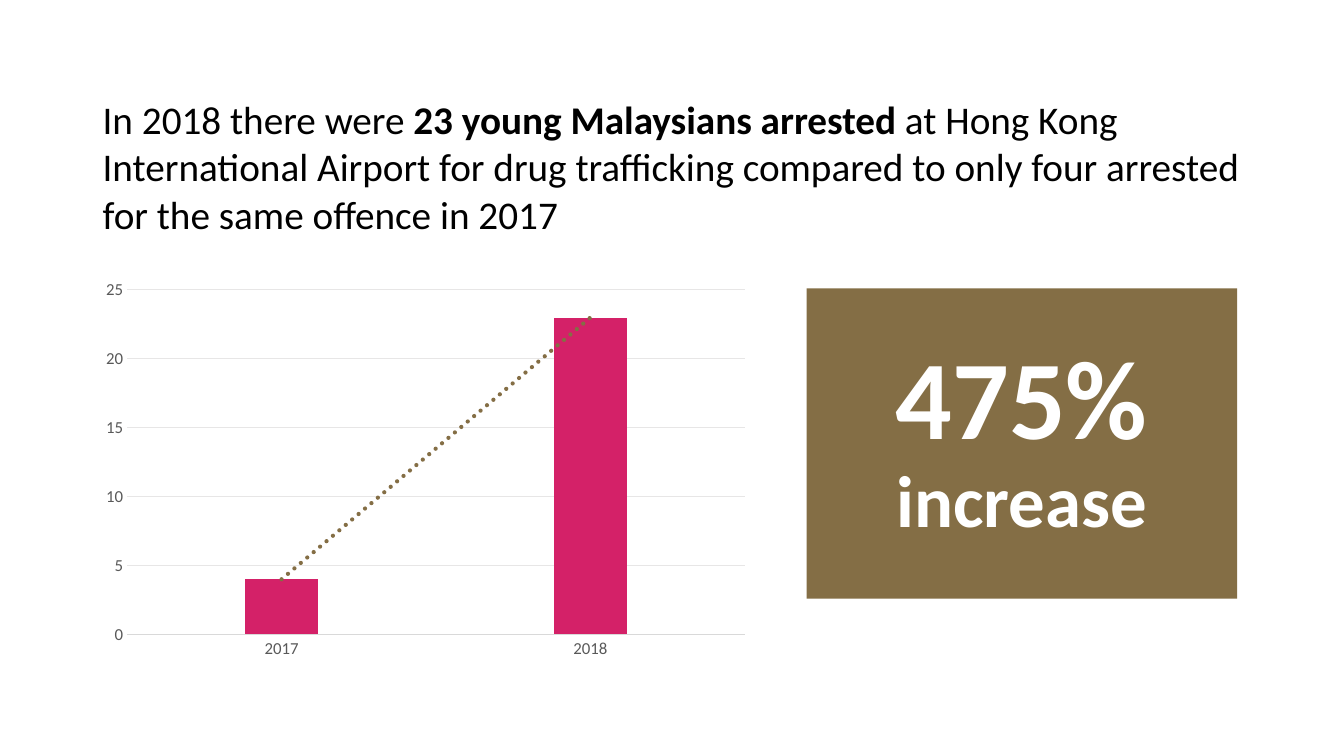
from dataclasses import dataclass

from lxml import etree
from pptx import Presentation
from pptx.chart.data import CategoryChartData
from pptx.dml.color import RGBColor
from pptx.enum.chart import XL_CHART_TYPE, XL_TICK_MARK
from pptx.enum.shapes import MSO_SHAPE
from pptx.enum.text import MSO_ANCHOR, MSO_AUTO_SIZE, PP_ALIGN
from pptx.util import Inches, Pt

COLUMNS = XL_CHART_TYPE.COLUMN_CLUSTERED
NO_TICKS = XL_TICK_MARK.NONE
RECTANGLE = MSO_SHAPE.RECTANGLE
MIDDLE = MSO_ANCHOR.MIDDLE
NO_AUTOFIT = MSO_AUTO_SIZE.NONE
CENTER = PP_ALIGN.CENTER

TITLE_ONLY = 5
TRENDLINE = """
<c:trendline xmlns:c="http://schemas.openxmlformats.org/drawingml/2006/chart"
             xmlns:a="http://schemas.openxmlformats.org/drawingml/2006/main">
  <c:spPr><a:ln w="{width}" cap="rnd">
    <a:solidFill><a:srgbClr val="{color}"/></a:solidFill>
    <a:prstDash val="sysDot"/>
  </a:ln></c:spPr>
  <c:trendlineType val="linear"/>
  <c:dispRSqr val="0"/>
  <c:dispEq val="0"/>
</c:trendline>
"""


@dataclass(frozen=True)
class Theme:
    font: str = "Calibri"
    text: RGBColor = RGBColor(0x00, 0x00, 0x00)
    light: RGBColor = RGBColor(0xFF, 0xFF, 0xFF)
    panel: RGBColor = RGBColor(0x84, 0x6E, 0x45)
    column: RGBColor = RGBColor(0xD4, 0x21, 0x68)
    label: RGBColor = RGBColor(0x59, 0x59, 0x59)
    axis: RGBColor = RGBColor(0xD9, 0xD9, 0xD9)
    grid: RGBColor = RGBColor(0xE7, 0xE6, 0xE6)
    figure_size: Pt = Pt(80)
    caption_size: Pt = Pt(52)
    body_size: Pt = Pt(28)
    body_leading: Pt = Pt(34)
    label_size: Pt = Pt(12)
    hairline: Pt = Pt(0.75)
    trend_width: Pt = Pt(3)


class SlideBuilder:
    """Adds styled elements to one slide."""

    def __init__(self, slide, theme):
        self.slide = slide
        self.theme = theme

    def style_font(self, font, color, size=None, bold=None):
        font.name = self.theme.font
        font.color.rgb = color
        font.size = size
        font.bold = bold

    def add_panel(self, *box):
        panel = self.slide.shapes.add_shape(RECTANGLE, *map(Inches, box))
        panel.shadow.inherit = False
        panel.fill.solid()
        panel.fill.fore_color.rgb = self.theme.panel
        panel.line.fill.background()

    def add_body(self, runs, *box):
        frame = self.slide.shapes.add_textbox(*map(Inches, box)).text_frame
        frame.word_wrap = True
        paragraph = frame.paragraphs[0]
        paragraph.line_spacing = self.theme.body_leading
        paragraph.space_before = Pt(10)
        self.style_font(paragraph.font, self.theme.text, self.theme.body_size)
        for text, bold in runs:
            run = paragraph.add_run()
            run.text = text
            run.font.bold = bold

    def add_title(self, runs, *box):
        title = self.slide.shapes.title
        title.left, title.top, title.width, title.height = map(Inches, box)
        title.element.getparent().append(title.element)
        frame = title.text_frame
        frame.word_wrap = True
        frame.auto_size = NO_AUTOFIT
        frame.vertical_anchor = MIDDLE
        paragraph = frame.paragraphs[0]
        paragraph.alignment = CENTER
        paragraph.line_spacing = 0.9
        self.style_font(paragraph.font, self.theme.light, bold=True)
        for text, size in runs:
            run = paragraph.add_run()
            run.text = text
            run.font.size = size

    def add_column_chart(self, categories, values, *box):
        data = CategoryChartData()
        data.categories = categories
        data.add_series("Series 1", values)
        chart = self.slide.shapes.add_chart(COLUMNS, *map(Inches, box), data).chart
        chart.has_title = False
        chart.has_legend = False
        self.style_font(chart.font, self.theme.label, self.theme.label_size)

        for axis in (chart.category_axis, chart.value_axis):
            axis.major_tick_mark = axis.minor_tick_mark = NO_TICKS
        self.style_line(chart.category_axis.format.line, self.theme.axis)
        value_axis = chart.value_axis
        value_axis.minimum_scale, value_axis.maximum_scale = 0, 25
        value_axis.major_unit = 5
        value_axis.format.line.fill.background()
        self.style_line(value_axis.major_gridlines.format.line, self.theme.grid)

        plot = chart.plots[0]
        plot.vary_by_categories = False
        plot.gap_width = 325
        plot.overlap = -27
        series = plot.series[0]
        series.format.fill.solid()
        series.format.fill.fore_color.rgb = self.theme.column
        self.add_trendline(series)

    def style_line(self, line, color):
        line.color.rgb = color
        line.width = self.theme.hairline

    def add_trendline(self, series):
        xml = TRENDLINE.format(width=int(self.theme.trend_width), color=self.theme.panel)
        series._element.find("{*}cat").addprevious(etree.fromstring(xml))


def main():
    presentation = Presentation()
    presentation.slide_width = Inches(13.33)
    presentation.slide_height = Inches(7.5)
    slide = presentation.slides.add_slide(presentation.slide_layouts[TITLE_ONLY])
    theme = Theme()
    builder = SlideBuilder(slide, theme)

    builder.add_panel(8, 2.86, 4.27, 3.08)
    builder.add_body(
        [
            ("In 2018 there were ", False),
            ("23 young Malaysians arrested ", True),
            ("at Hong Kong International Airport for drug trafficking compared "
             "to only four arrested for the same offence in 2017", False),
        ],
        0.92, 0.89, 11.5, 1.52,
    )
    builder.add_column_chart(["2017", "2018"], [4, 23], 0.92, 2.7, 6.6, 3.91)
    builder.add_title(
        [("475% ", theme.figure_size), ("increase", theme.caption_size)],
        8.27, 3.31, 3.73, 2.17,
    )
    presentation.save("out.pptx")


if __name__ == "__main__":
    main()
